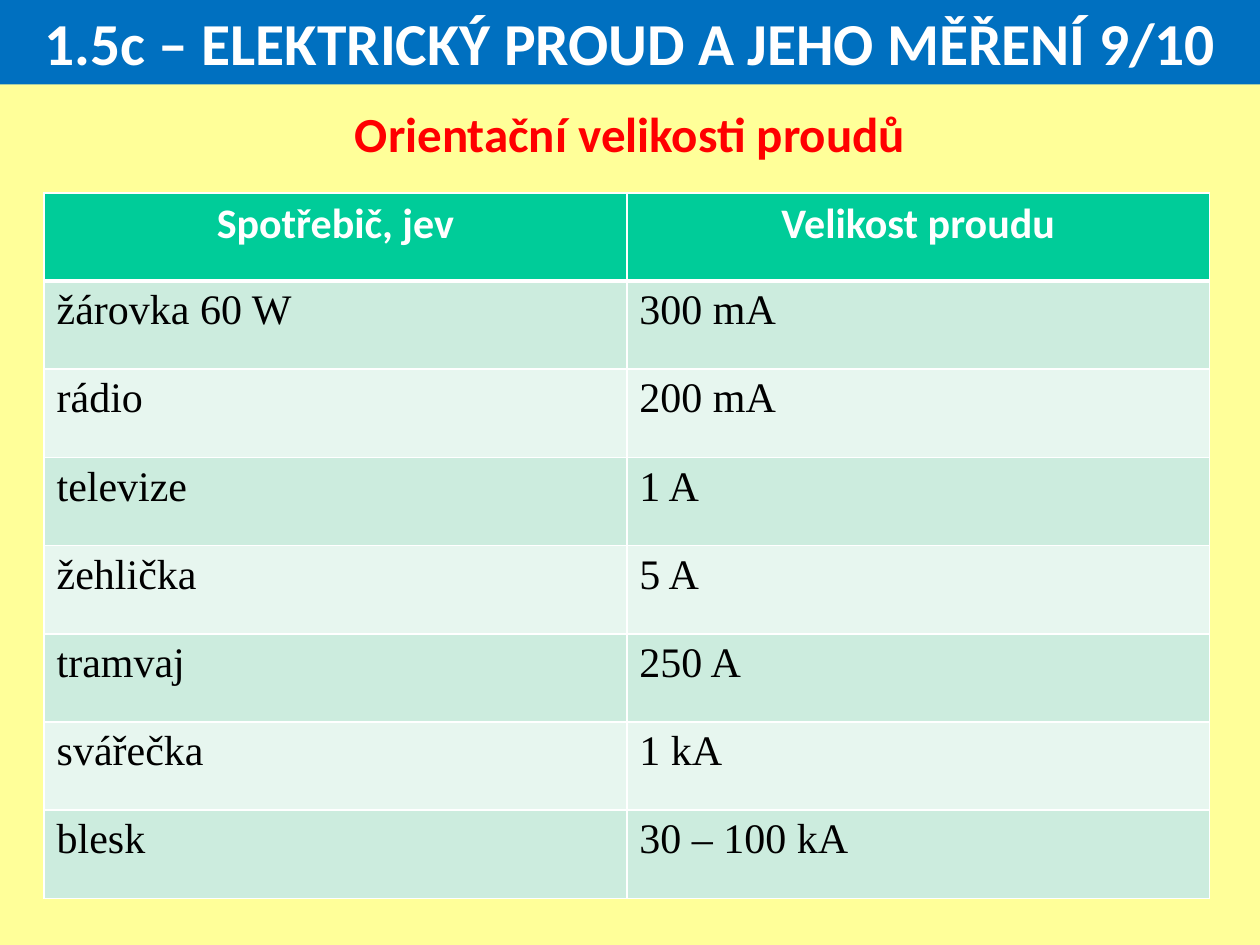
"""Build a slide listing typical electric currents of appliances and phenomena."""
from lxml.etree import SubElement
from pptx import Presentation
from pptx.dml.color import RGBColor
from pptx.enum.text import MSO_ANCHOR, MSO_AUTO_SIZE, PP_ALIGN
from pptx.oxml.ns import qn
from pptx.util import Inches, Pt

TITLE = "1.5c – ELEKTRICKÝ PROUD A JEHO MĚŘENÍ 9/10"
SUBTITLE = "Orientační velikosti proudů"
CURRENTS = [
    ("Spotřebič, jev", "Velikost proudu"),
    ("žárovka 60 W", "300 mA"),
    ("rádio", "200 mA"),
    ("televize", "1 A"),
    ("žehlička", "5 A"),
    ("tramvaj", "250 A"),
    ("svářečka", "1 kA"),
    ("blesk", "30 – 100 kA"),
]

YELLOW = RGBColor(0xFF, 0xFF, 0x99)
BLUE = RGBColor(0x00, 0x70, 0xC0)
RED = RGBColor(0xFF, 0x00, 0x00)
WHITE = RGBColor(0xFF, 0xFF, 0xFF)
BLACK = RGBColor(0x00, 0x00, 0x00)
GREEN = RGBColor(0x00, 0xCC, 0x99)
BANDS = (RGBColor(0xE7, 0xF6, 0xEF), RGBColor(0xCC, 0xEC, 0xDE))

WIDTH, HEIGHT = Inches(10), Inches(7.5)
ROW_HEIGHT = Inches(0.7)


def style(paragraph, size, color, bold=True, font="Calibri", align=PP_ALIGN.CENTER):
    paragraph.alignment = align
    paragraph.font.size = Pt(size)
    paragraph.font.name = font
    paragraph.font.bold = bold
    paragraph.font.color.rgb = color


def add_borders(cell, widths):
    properties = cell._tc.get_or_add_tcPr()
    for position, (side, width) in enumerate(zip("LRTB", widths)):
        line = SubElement(properties, qn(f"a:ln{side}"), w=str(Pt(width)))
        color = SubElement(SubElement(line, qn("a:solidFill")), qn("a:srgbClr"))
        color.set("val", str(WHITE))
        properties.insert(position, line)


def add_heading(slide):
    title = slide.shapes.title
    title.left, title.top, title.width, title.height = 0, 0, WIDTH, Inches(0.67)
    title.fill.solid()
    title.fill.fore_color.rgb = BLUE
    title.text_frame.text = TITLE
    title.text_frame.auto_size = MSO_AUTO_SIZE.NONE
    title.text_frame.vertical_anchor = MSO_ANCHOR.MIDDLE
    style(title.text_frame.paragraphs[0], 34, WHITE)

    subtitle = slide.shapes.add_textbox(0, Inches(0.77), WIDTH, Inches(0.57))
    subtitle.text_frame.word_wrap = True
    subtitle.text_frame.text = SUBTITLE
    style(subtitle.text_frame.paragraphs[0], 28, RED)


def add_currents(slide):
    rows, columns = len(CURRENTS), len(CURRENTS[0])
    table = slide.shapes.add_table(
        rows, columns, Inches(0.35), Inches(1.53), Inches(9.25), rows * ROW_HEIGHT
    ).table
    for row, entries in enumerate(CURRENTS):
        table.rows[row].height = ROW_HEIGHT
        for column, entry in enumerate(entries):
            cell = table.cell(row, column)
            cell.text = entry
            cell.fill.solid()
            cell.fill.fore_color.rgb = BANDS[row % 2] if row else GREEN
            add_borders(cell, (1, 1, 3 if row == 1 else 1, 1 if row else 3))
            paragraph = cell.text_frame.paragraphs[0]
            if row:
                style(paragraph, 24, BLACK, False, "Times New Roman", PP_ALIGN.LEFT)
            else:
                style(paragraph, 24, WHITE)


def main():
    deck = Presentation()
    deck.slide_width, deck.slide_height = WIDTH, HEIGHT
    slide = deck.slides.add_slide(deck.slide_layouts.get_by_name("Title Only"))
    slide.background.fill.solid()
    slide.background.fill.fore_color.rgb = YELLOW
    add_heading(slide)
    add_currents(slide)
    deck.save("out.pptx")


if __name__ == "__main__":
    main()
